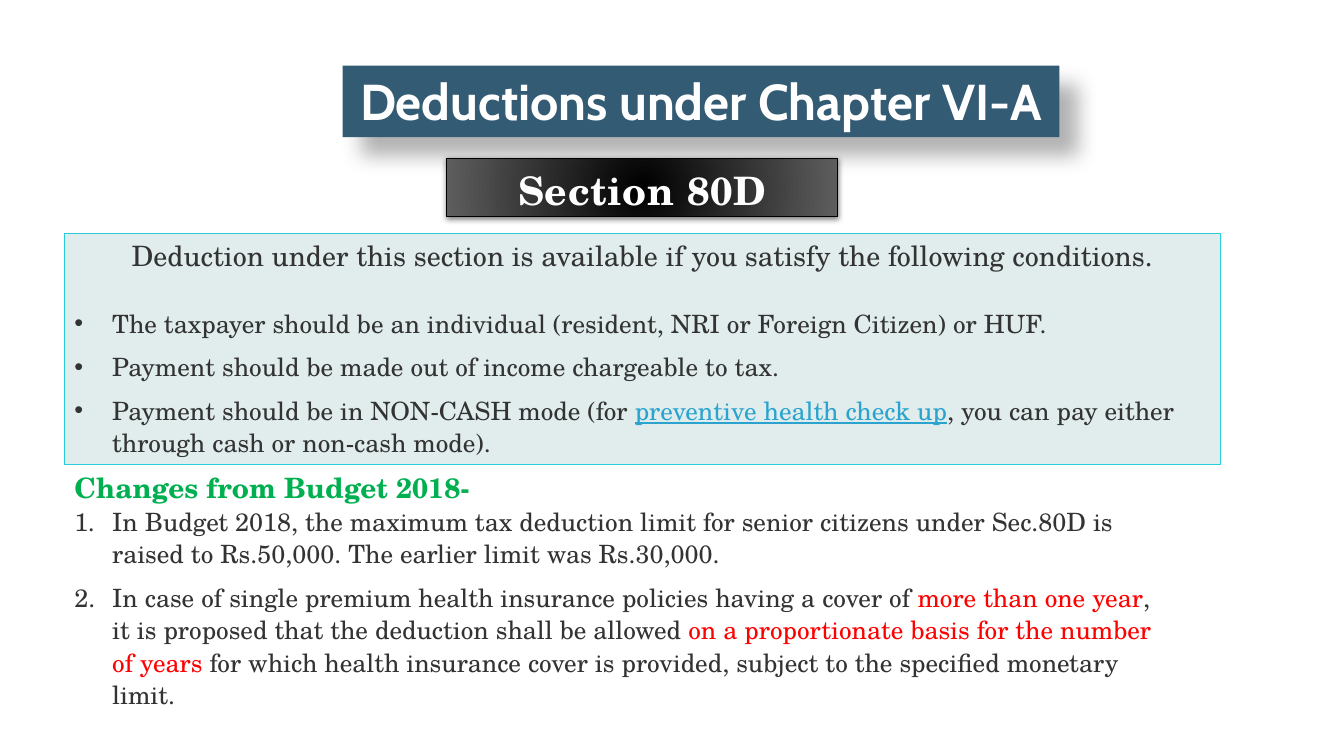
from lxml.etree import SubElement
from pptx import Presentation
from pptx.dml.color import RGBColor
from pptx.enum.shapes import MSO_SHAPE
from pptx.enum.text import MSO_ANCHOR, PP_ALIGN
from pptx.oxml import parse_xml
from pptx.oxml.ns import nsdecls, qn
from pptx.util import Pt

SERIF = "TeX Gyre Schola"
WHITE, BLACK, GREY = "FFFFFF", "000000", "333333"
LINK, GREEN, RED = "2AA4CF", "00B050", "FF0000"


def color(hex_string):
    """Return the colour for a hex string."""
    return RGBColor.from_string(hex_string)


def shadow_effect(alpha, blur, distance, angle):
    """Return an effect list holding one black outer shadow."""
    return parse_xml(
        f'<a:effectLst {nsdecls("a")}><a:outerShdw blurRad="{Pt(blur)}" dist="{Pt(distance)}" '
        f'dir="{angle * 60000}" algn="tl" rotWithShape="0"><a:srgbClr val="{BLACK}">'
        f'<a:alpha val="{alpha * 1000}"/></a:srgbClr></a:outerShdw></a:effectLst>')


def prepare_frame(shape):
    """Wrap and top-align or centre the text of a shape, and return its frame."""
    frame = shape.text_frame
    frame.word_wrap = True
    frame.vertical_anchor = MSO_ANCHOR.TOP
    return frame


def add_box(slide, left, top, width, height, fill, line=None, shadow=None):
    """Add a rectangle with an optional outline and shadow."""
    shape = slide.shapes.add_shape(
        MSO_SHAPE.RECTANGLE, Pt(left), Pt(top), Pt(width), Pt(height))
    shape.fill.solid()
    shape.fill.fore_color.rgb = color(fill)
    if line:
        shape.line.color.rgb = color(line)
        shape.line.width = Pt(0.75)
    else:
        shape.line.fill.background()
    shape.shadow.inherit = False
    if shadow:
        properties = shape._element.spPr
        properties.replace(properties.find(qn("a:effectLst")), shadow_effect(*shadow))
    return shape


def set_radial_fill(shape, inner, outer):
    """Replace the solid fill of a shape by a circular gradient."""
    properties = shape._element.spPr
    gradient = parse_xml(
        f'<a:gradFill {nsdecls("a")} rotWithShape="1"><a:gsLst>'
        f'<a:gs pos="0"><a:srgbClr val="{inner}"/></a:gs>'
        f'<a:gs pos="100000"><a:srgbClr val="{outer}"/></a:gs></a:gsLst>'
        '<a:path path="circle"><a:fillToRect l="50000" t="50000" r="50000" b="50000"/>'
        '</a:path></a:gradFill>')
    properties.replace(properties.find(qn("a:solidFill")), gradient)


def style_paragraph(paragraph, text, size, hex_string, name=SERIF, bold=False,
                    align=PP_ALIGN.LEFT):
    """Fill a paragraph whose text has a single style."""
    paragraph.alignment = align
    paragraph.add_run().text = text
    font = paragraph.font
    font.name, font.size, font.bold = name, Pt(size), bold
    font.color.rgb = color(hex_string)


def add_item(frame, parts, bullet_tag, **bullet):
    """Add a hanging list item made of (text, colour) parts."""
    paragraph = frame.add_paragraph()
    paragraph.alignment = PP_ALIGN.LEFT
    paragraph.line_spacing = 1.07
    paragraph.space_after = Pt(8)
    properties = paragraph._p.get_or_add_pPr()
    properties.set("marL", str(Pt(27)))
    properties.set("indent", str(Pt(-27)))
    if bullet_tag == "a:buChar":
        SubElement(properties, qn("a:buFont"), typeface="Arial")
    SubElement(properties, qn(bullet_tag), **bullet)
    paragraph.font.name = SERIF
    paragraph.font.size = Pt(18)
    for text, hex_string in parts:
        run = paragraph.add_run()
        run.text = text
        run.font.color.rgb = color(hex_string)
        run.font.underline = True if hex_string == LINK else None


def add_title(slide):
    """Add the chapter banner."""
    banner = add_box(slide, 244.8, 46.8, 512, 51.1, "335B74", shadow=(30, 15, 18, 45))
    style_paragraph(prepare_frame(banner).paragraphs[0], "Deductions under Chapter VI-A",
                    36, WHITE, "Cabin", True, PP_ALIGN.CENTER)


def add_section(slide):
    """Add the section plate with its outlined heading."""
    plate = add_box(slide, 319, 113, 279.4, 41.8, BLACK, BLACK, (50, 4, 1, 90))
    set_radial_fill(plate, BLACK, "5E5E5E")
    paragraph = prepare_frame(plate).paragraphs[0]
    style_paragraph(paragraph, "Section 80D", 28, "FEFEFE", bold=True, align=PP_ALIGN.CENTER)
    paragraph.line_spacing = 1.07
    paragraph.space_after = Pt(8)
    properties = paragraph.runs[0]._r.get_or_add_rPr()
    properties.set("spc", "50")
    properties.append(parse_xml(
        f'<a:ln {nsdecls("a")} w="{Pt(0.75)}"><a:solidFill><a:srgbClr val="1CADE4"/>'
        '</a:solidFill></a:ln>'))
    properties.append(shadow_effect(40, 1, 1, 45))


def add_conditions(slide):
    """Add the panel of conditions."""
    panel = add_box(slide, 46.1, 167, 825.8, 164.9, "E0EDEC", "27CED7")
    frame = prepare_frame(panel)
    heading = frame.paragraphs[0]
    style_paragraph(
        heading,
        "Deduction under this section is available if you satisfy the following conditions.",
        20, GREY, align=PP_ALIGN.CENTER)
    heading.space_after = Pt(24)
    conditions = [
        [("The taxpayer should be an individual (resident, NRI or Foreign Citizen) or HUF.", GREY)],
        [("Payment should be made out of income chargeable to tax.", GREY)],
        [("Payment should be in NON-CASH mode (for ", GREY),
         ("preventive health check up", LINK),
         (", you can pay either through cash or non-cash mode).", GREY)],
    ]
    for parts in conditions:
        add_item(frame, parts, "a:buChar", char="•")


def add_changes(slide):
    """Add the numbered budget changes."""
    box = slide.shapes.add_textbox(Pt(46.1), Pt(332.6), Pt(789.8), Pt(156.2))
    frame = prepare_frame(box)
    style_paragraph(frame.paragraphs[0], "Changes from Budget 2018-", 20, GREEN, bold=True)
    changes = [
        [("In Budget 2018, the maximum tax deduction limit for senior citizens under Sec.80D is "
          "raised to Rs.50,000. The earlier limit was Rs.30,000.", GREY)],
        [("In case of single premium health insurance policies having a cover of ", GREY),
         ("more than one year", RED),
         (", it is proposed that the deduction shall be allowed ", GREY),
         ("on a proportionate basis for the number of years ", RED),
         ("for which health insurance cover is provided, subject to the specified monetary "
          "limit.", GREY)],
    ]
    for parts in changes:
        add_item(frame, parts, "a:buAutoNum", type="arabicPeriod")


def main():
    """Build the slide and save it."""
    presentation = Presentation()
    presentation.slide_width, presentation.slide_height = Pt(960), Pt(540)
    slide = presentation.slides.add_slide(presentation.slide_layouts[6])
    add_title(slide)
    add_section(slide)
    add_conditions(slide)
    add_changes(slide)
    presentation.save("out.pptx")


if __name__ == "__main__":
    main()
